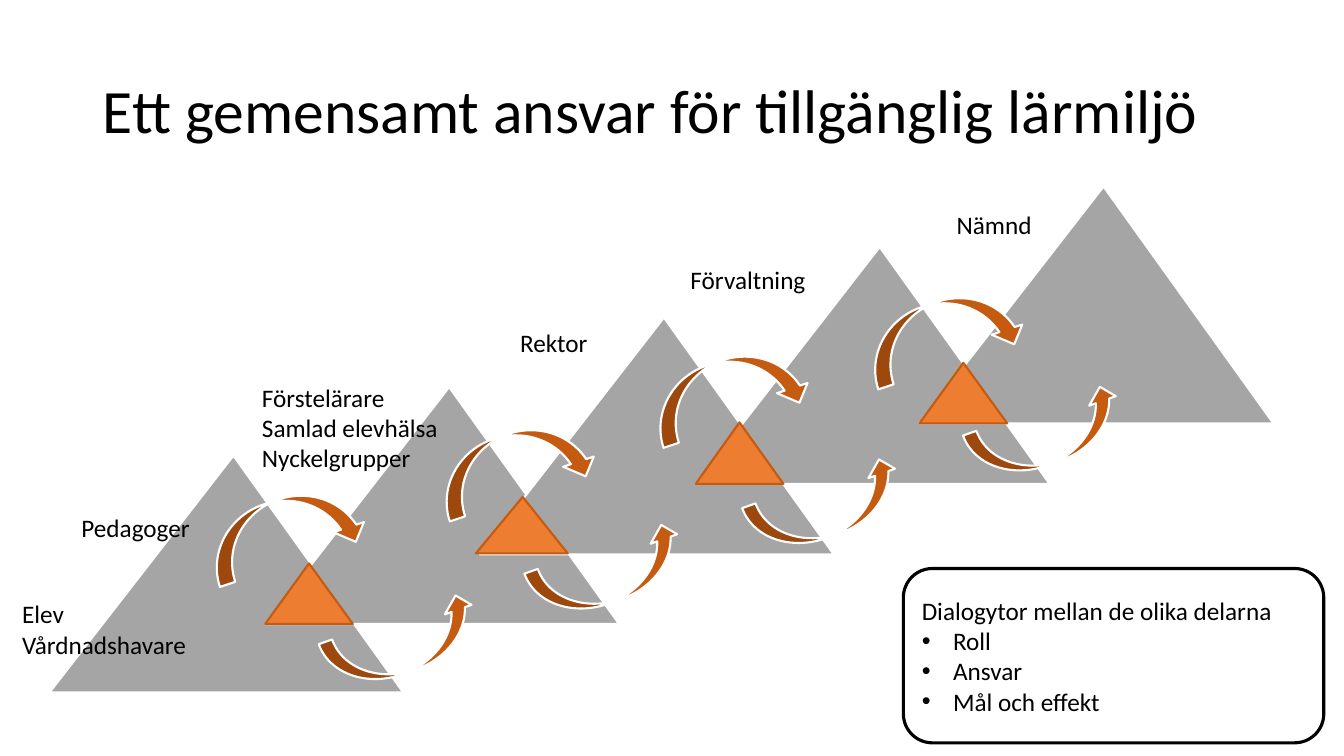
from lxml import etree
from pptx import Presentation
from pptx.dml.color import RGBColor
from pptx.enum import shapes, text
from pptx.oxml.ns import qn
from pptx.util import Inches, Pt

FONT = "Calibri"
COLORS = {
    "text": "000000",
    "white": "FFFFFF",
    "mountain": "A5A5A5",
    "overlap": "ED7D31",
    "arrow": "C55A11",
}
MOUNTAINS = [(0.49, 4.52), (2.63, 3.84), (4.76, 3.15), (6.9, 2.45), (9.12, 1.85)]
OVERLAPS = [
    (2.63, 5.59, 0.87, 0.6, 0.5),
    (4.72, 4.93, 0.91, 0.56, 0.51),
    (6.9, 4.19, 0.87, 0.61, 0.5),
    (9.12, 3.6, 0.87, 0.6, 0.5),
]
DOWN_ARROWS = [(2.04, 4.95), (4.32, 4.3), (6.44, 3.57), (8.57, 2.99)]
UP_ARROWS = [(3.21, 6.11), (5.25, 5.41), (7.41, 4.76), (9.6, 4.04)]
LABELS = [
    (0.12, 5.89, 2.45, 0.71, "Elev\nVårdnadshavare"),
    (0.71, 5.03, 1.56, 0.4, "Pedagoger"),
    (2.5, 3.74, 2.19, 1.01, "Förstelärare Samlad elevhälsa\nNyckelgrupper"),
    (5.06, 3.2, 0.94, 0.4, "Rektor"),
    (6.75, 2.57, 1.61, 0.4, "Förvaltning"),
    (9.39, 2.03, 1.2, 0.4, "Nämnd"),
]


def rgb(name):
    return RGBColor.from_string(COLORS[name])


def write(tf, content, size):
    tf.word_wrap = True
    tf.text = content
    for p in tf.paragraphs:
        p.alignment = text.PP_ALIGN.LEFT
        for r in p.runs:
            r.font.name = FONT
            r.font.size = Pt(size)
            r.font.color.rgb = rgb("text")


def add_bullet(p):
    pPr = p._p.get_or_add_pPr()
    pPr.set("marL", str(Inches(0.31)))
    pPr.set("indent", str(-Inches(0.31)))
    etree.SubElement(pPr, qn("a:buFont")).set("typeface", "Arial")
    etree.SubElement(pPr, qn("a:buChar")).set("char", "•")


def set_title(slide, content):
    sp = slide.shapes.title
    sp.left, sp.top = Inches(0.92), Inches(0.4)
    sp.width, sp.height = Inches(11.5), Inches(1.45)
    tf = sp.text_frame
    write(tf, content, 44)
    tf.auto_size = text.MSO_AUTO_SIZE.NONE
    tf.vertical_anchor = text.MSO_ANCHOR.MIDDLE
    tf.paragraphs[0].line_spacing = 0.9


def add_figure(slide, kind, box, fill, line, line_width=1.5):
    sp = slide.shapes.add_shape(kind, *map(Inches, box))
    sp.shadow.inherit = False
    sp.fill.solid()
    sp.fill.fore_color.rgb = rgb(fill)
    sp.line.color.rgb = rgb(line)
    sp.line.width = Pt(line_width)
    return sp


def add_triangle(slide, box, peak, fill, line):
    sp = add_figure(slide, shapes.MSO_SHAPE.ISOSCELES_TRIANGLE, box, fill, line)
    sp.adjustments[0] = peak


def add_arrows(slide, kind, places, height, rotation):
    for left, top in places:
        sp = add_figure(slide, kind, (left, top, 1.58, height), "arrow", "white")
        sp.rotation = rotation


def add_label(slide, left, top, width, height, content):
    sp = slide.shapes.add_textbox(*map(Inches, (left, top, width, height)))
    write(sp.text_frame, content, 18)
    sp.text_frame.auto_size = text.MSO_AUTO_SIZE.SHAPE_TO_FIT_TEXT


def add_dialog_box(slide, heading, points):
    sp = add_figure(slide, shapes.MSO_SHAPE.ROUNDED_RECTANGLE,
                    (8.96, 5.64, 4.17, 1.73), "white", "text", 2.25)
    tf = sp.text_frame
    write(tf, "\n".join([heading, *points]), 18)
    tf.vertical_anchor = text.MSO_ANCHOR.MIDDLE
    for p in tf.paragraphs[1:]:
        add_bullet(p)


def main():
    prs = Presentation()
    prs.slide_width, prs.slide_height = Inches(13.33), Inches(7.5)
    slide = prs.slides.add_slide(prs.slide_layouts[5])
    set_title(slide, "Ett gemensamt ansvar för tillgänglig lärmiljö")
    for left, top in MOUNTAINS:
        add_triangle(slide, (left, top, 3.51, 2.35), 0.52, "mountain", "white")
    for *box, peak in OVERLAPS:
        add_triangle(slide, box, peak, "overlap", "arrow")
    add_arrows(slide, shapes.MSO_SHAPE.CURVED_DOWN_ARROW, DOWN_ARROWS, 0.64, 341.6)
    add_arrows(slide, shapes.MSO_SHAPE.CURVED_UP_ARROW, UP_ARROWS, 0.56, 340.4)
    for label in LABELS:
        add_label(slide, *label)
    add_dialog_box(slide, "Dialogytor mellan de olika delarna",
                   ["Roll", "Ansvar", "Mål och effekt"])
    prs.save("out.pptx")


if __name__ == "__main__":
    main()
